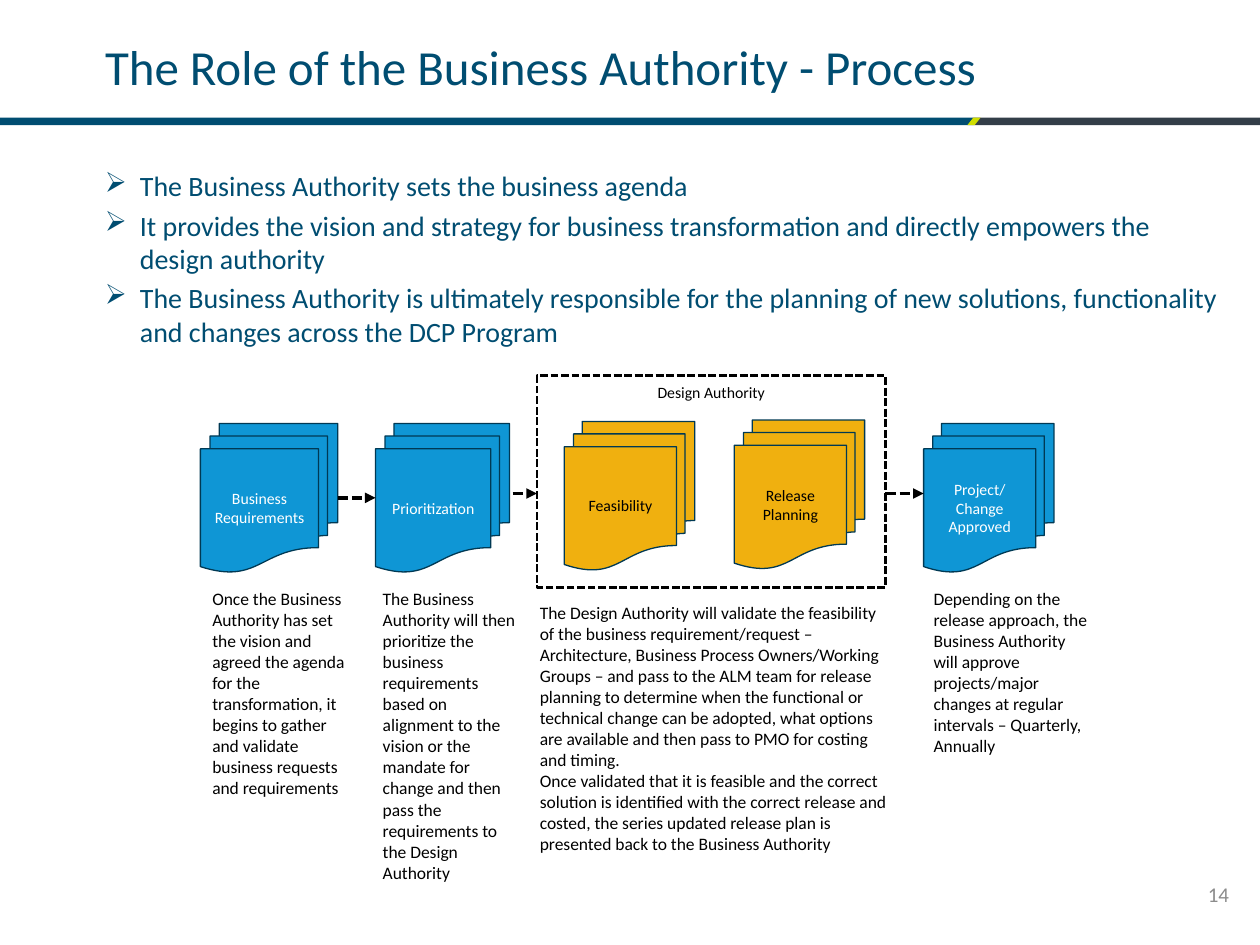
import pptx
import pptx.util
import pptx.dml.color
import pptx.enum.dml
import pptx.enum.shapes
import pptx.enum.text
import pptx.oxml
import pptx.oxml.ns

Pt = pptx.util.Pt
SHAPES = pptx.enum.shapes.MSO_SHAPE
ALIGN = pptx.enum.text.PP_ALIGN
ANCHOR = pptx.enum.text.MSO_ANCHOR
COLORS = {
    "navy": "004D71", "slate": "333E48", "lime": "CFDE00", "blue": "0F96D5",
    "gold": "F0B00F", "edge": "003954", "black": "000000", "white": "FFFFFF",
    "gray": "8C8C8C",
}
BULLETS = [
    "The Business Authority sets the business agenda",
    "It provides the vision and strategy for business transformation and directly empowers the design authority",
    "The Business Authority is ultimately responsible for the planning of new solutions, functionality and changes across the DCP Program",
]
STAGES = [
    ("Business Requirements", (114.5, 242, 78.5, 85), "blue", "white"),
    ("Prioritization", (214.6, 242, 76.5, 85), "blue", "white"),
    ("Project/ Change Approved", (527.8, 242, 74.5, 85), "blue", "white"),
    ("Feasibility", (322.5, 240.8, 74.5, 85), "gold", "black"),
    ("Release Planning", (419.6, 240, 74.5, 85), "gold", "black"),
]
NOTES = [
    ((114.2, 332.6, 90, 128), ["Once the Business Authority has set the vision and agreed the agenda for the transformation, it begins to gather and validate business requests and requirements"]),
    ((211.6, 332.6, 90, 177), ["The Business Authority will then prioritize the business requirements based on alignment to the vision or the mandate for change and then pass the requirements to the Design Authority"]),
    ((301.4, 340.2, 213.1, 153), [
        "The Design Authority will validate the feasibility of the business requirement/request – Architecture, Business Process Owners/Working Groups – and pass to the ALM team for release planning to determine when the functional or technical change can be adopted, what options are available and then pass to PMO for costing and timing.",
        "Once validated that it is feasible and the correct solution is identified with the correct release and costed, the series updated release plan is presented back to the Business Authority",
    ]),
    ((526.4, 332.6, 103, 104), ["Depending on the release approach, the Business Authority will approve projects/major changes at regular intervals – Quarterly, Annually"]),
]


def rgb(name):
    """Return the named colour."""
    return pptx.dml.color.RGBColor.from_string(COLORS[name])


def write(frame, *texts, size=10, color="black", align=ALIGN.LEFT,
          anchor=ANCHOR.TOP, insets=(7.2, 3.6), wrap=True, bullet=None):
    """Fill a text frame with one formatted paragraph per text."""
    frame.word_wrap = wrap
    frame.vertical_anchor = anchor
    frame.margin_left = frame.margin_right = Pt(insets[0])
    frame.margin_top = frame.margin_bottom = Pt(insets[1])
    for index, text in enumerate(texts):
        para = frame.add_paragraph() if index else frame.paragraphs[0]
        para.alignment = align
        span = para.add_run()
        span.text = text
        span.font.name = "Calibri"
        span.font.size = Pt(size)
        span.font.color.rgb = rgb(color)
        if bullet:
            para.space_before = Pt(size * 0.2)
            properties = para._p.get_or_add_pPr()
            properties.set("marL", str(Pt(20)))
            properties.set("indent", str(-Pt(20)))
            mark = pptx.oxml.parse_xml(f'<a:buChar {pptx.oxml.ns.nsdecls("a")} char="{bullet}"/>')
            properties.append(mark)


def add_text(page, place, *texts, **style):
    """Add a text box at a place given in points."""
    box = page.shapes.add_textbox(*map(Pt, place))
    write(box.text_frame, *texts, **style)


def add_shape(page, kind, place, fill=None, line=None, width=0.75):
    """Add a flat preset shape with optional fill and outline."""
    shape = page.shapes.add_shape(kind, *map(Pt, place))
    shape.shadow.inherit = False
    if fill:
        shape.fill.solid()
        shape.fill.fore_color.rgb = rgb(fill)
    else:
        shape.fill.background()
    if line:
        shape.line.color.rgb = rgb(line)
        shape.line.width = Pt(width)
    else:
        shape.line.fill.background()
    return shape


def add_arrow(page, start, end, height):
    """Add a horizontal dashed arrow."""
    arrow = page.shapes.add_connector(
        pptx.enum.shapes.MSO_CONNECTOR.STRAIGHT, *map(Pt, (start, height, end, height)))
    arrow.line.color.rgb = rgb("black")
    arrow.line.width = Pt(2)
    arrow.line.dash_style = pptx.enum.dml.MSO_LINE.SQUARE_DOT
    names = pptx.oxml.ns.nsdecls("a")
    arrow.line._get_or_add_ln().append(pptx.oxml.parse_xml(f'<a:tailEnd {names} type="triangle"/>'))
    arrow._element.spPr.append(pptx.oxml.parse_xml(f"<a:effectLst {names}/>"))
    return arrow


def add_header(page):
    """Place the title and the coloured rule under it."""
    title = page.shapes.title
    title.left, title.top, title.width, title.height = map(Pt, (60, 11, 598, 53))
    write(title.text_frame, "The Role of the Business Authority - Process", size=28,
          color="navy", anchor=ANCHOR.MIDDLE, insets=(0, 0), wrap=False)
    add_shape(page, SHAPES.RECTANGLE, (0, 67.2, 556, 4.3), "navy")
    add_shape(page, SHAPES.RECTANGLE, (556, 67.2, 164, 4.3), "slate")
    accent = add_shape(page, SHAPES.PARALLELOGRAM, (552.8, 67.2, 7.6, 4.3), "lime")
    accent.adjustments[0] = 0.8


def add_process(page):
    """Draw the stages, the frame around two of them and the arrows."""
    frame = add_shape(page, SHAPES.RECTANGLE, (306.8, 214.6, 199.2, 121), line="black", width=1.5)
    frame.line.dash_style = pptx.enum.dml.MSO_LINE.SQUARE_DOT
    write(frame.text_frame, "Design Authority", size=9, align=ALIGN.CENTER, insets=(5, 4.3))
    stages = []
    for label, place, fill, color in STAGES:
        stage = add_shape(page, SHAPES.FLOWCHART_MULTIDOCUMENT, place, fill, "edge")
        write(stage.text_frame, label, size=9, color=color, align=ALIGN.CENTER, anchor=ANCHOR.MIDDLE)
        stages.append(stage)
    first = add_arrow(page, 193, 214.6, 284.5)
    first.begin_connect(stages[0], 3)
    first.end_connect(stages[1], 1)
    add_arrow(page, 293, 306.8, 282)
    add_arrow(page, 506, 527.8, 282)


def main():
    """Build and save the deck."""
    deck = pptx.Presentation()
    deck.slide_width, deck.slide_height = Pt(720), Pt(540)
    page = deck.slides.add_slide(deck.slide_layouts[5])
    add_header(page)
    add_text(page, (60, 96.5, 638.6, 312), *BULLETS, size=16, color="navy", insets=(0, 0), bullet="➢")
    add_process(page)
    for place, texts in NOTES:
        add_text(page, place, *texts)
    add_text(page, (541.4, 500.4, 168, 29), "14", size=12, color="gray", align=ALIGN.RIGHT)
    deck.save("out.pptx")


if __name__ == "__main__":
    main()
